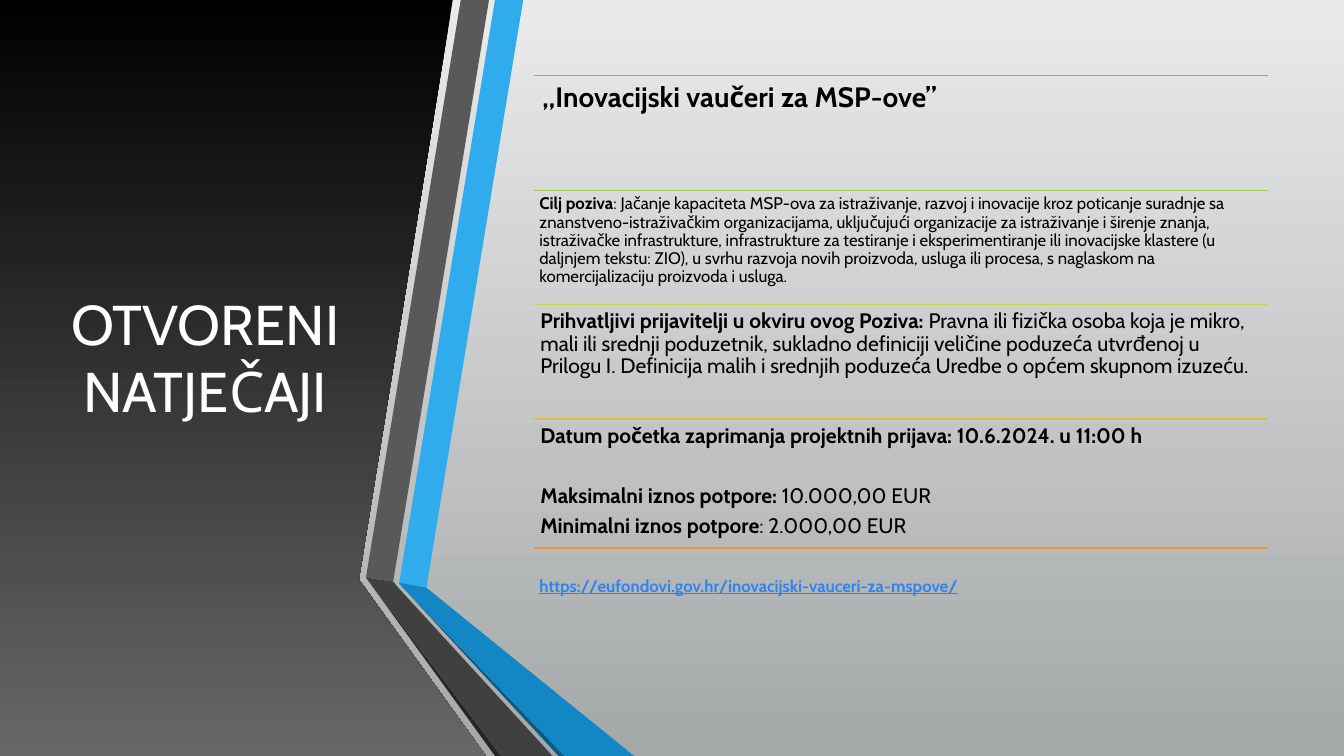
from lxml.etree import SubElement
from pptx import Presentation
from pptx.dml.color import RGBColor
from pptx.enum.shapes import MSO_CONNECTOR
from pptx.enum.text import MSO_ANCHOR, PP_ALIGN
from pptx.oxml.ns import qn
from pptx.util import Inches, Pt

WIDTH, HEIGHT = 13.33, 7.5
FONT = "Cabin"
COLORS = {
    "light": "E9EAEB", "shade": "A5A8A9", "black": "000000", "grey": "676767",
    "white": "FFFFFF", "link": "3085ED",
}
# Ribbon folds: fill and outline
RIBBONS = [
    ("30ACEC", [(3.96, 5.78), (4.23, 5.83), (5.19, 0), (4.91, 0)]),
    ("595959", [(4.85, 0), (4.57, 0), (3.63, 5.73), (3.9, 5.77)]),
    ("262626", [(3.63, 5.73), (4.91, HEIGHT), (4.97, HEIGHT)]),
    ("0C5A82", [(3.96, 5.79), (5.54, HEIGHT), (5.6, HEIGHT)]),
    ("1287C3", [(3.96, 5.79), (5.6, HEIGHT), (6.29, HEIGHT), (4.23, 5.83), (3.96, 5.78)]),
    ("404040", [(5.48, HEIGHT), (3.95, 5.83), (3.9, 5.77), (3.63, 5.73), (4.97, HEIGHT)]),
]
# Rows: rule colour, height, text size, inset, extra top inset, paragraphs of (bold, plain)
ROWS = [
    ("80C34F", 1.14, 20, 0.08, 0, [("„Inovacijski vaučeri za MSP-ove”", "")]),
    ("A1CB4A", 1.13, 12, 0.05, 0, [(
        "Cilj poziva",
        ": Jačanje kapaciteta MSP-ova za istraživanje, razvoj i inovacije kroz poticanje "
        "suradnje sa znanstveno-istraživačkim organizacijama, uključujući organizacije za "
        "istraživanje i širenje znanja, istraživačke infrastrukture, infrastrukture za "
        "testiranje i eksperimentiranje ili inovacijske klastere (u daljnjem tekstu: ZIO), "
        "u svrhu razvoja novih proizvoda, usluga ili procesa, s naglaskom na "
        "komercijalizaciju proizvoda i usluga.")]),
    ("C8D346", 1.14, 15, 0.06, 0, [(
        "Prihvatljivi prijavitelji u okviru ovog Poziva: ",
        "Pravna ili fizička osoba koja je mikro, mali ili srednji poduzetnik, sukladno "
        "definiciji veličine poduzeća utvrđenoj u Prilogu I. Definicija malih i srednjih "
        "poduzeća Uredbe o općem skupnom izuzeću.")]),
    ("DBC042", 1.28, 15, 0.06, 0, [
        ("Datum početka zaprimanja projektnih prijava: 10.6.2024. u 11:00 h", ""),
        ("Maksimalni iznos potpore: ", "10.000,00 EUR"),
        ("Minimalni iznos potpore", ": 2.000,00 EUR")]),
    ("E29D3E", 1.14, 12, 0.05, 0.24, [
        ("https://eufondovi.gov.hr/inovacijski-vauceri-za-mspove/", "")]),
]


def rgb(value):
    return RGBColor.from_string(value)


def shade(fill, top, bottom):
    """Fill with a gradient that runs straight down."""
    fill.gradient()
    fill.gradient_angle = 270
    for stop, name in zip(fill.gradient_stops, (top, bottom)):
        stop.color.rgb = rgb(COLORS[name])


def add_text(slide, box, paragraphs, size, color="black", inset=0.1, top=0,
             align=PP_ALIGN.LEFT, anchor=MSO_ANCHOR.TOP, spacing=0.9,
             underline=False, gap=0):
    """Place (bold, plain) paragraphs; gap is the space before the second one."""
    frame = slide.shapes.add_textbox(*map(Inches, box)).text_frame
    frame.word_wrap = True
    frame.vertical_anchor = anchor
    frame.margin_left = frame.margin_right = frame.margin_bottom = Inches(inset)
    frame.margin_top = Inches(inset + top)
    for i, parts in enumerate(paragraphs):
        par = frame.add_paragraph() if i else frame.paragraphs[0]
        par.alignment = align
        par.line_spacing = spacing
        par.space_after = Pt(size * 0.35)
        if i == 1:
            par.space_before = Pt(gap)
        for text, bold in zip(parts, (True, False)):
            if text:
                run = par.add_run()
                run.text = text
                font = run.font
                font.name, font.size, font.bold = FONT, Pt(size), bold
                font.underline = underline
                font.color.rgb = rgb(COLORS[color])


def add_outline(slide, points):
    points = [(Inches(x), Inches(y)) for x, y in points]
    builder = slide.shapes.build_freeform(*points[0])
    builder.add_line_segments(points[1:], close=True)
    shape = builder.convert_to_shape()
    shape.shadow.inherit = False
    shape.line.fill.background()
    return shape


def add_rule(slide, left, top, width, color):
    line = slide.shapes.add_connector(
        MSO_CONNECTOR.STRAIGHT, *map(Inches, (left, top, left + width, top)))
    line.line.color.rgb = rgb(color)
    line.line.width = Pt(1.25)
    SubElement(line._element.spPr, qn("a:effectLst"))


def add_panel(slide, box):
    left, top, width, height = box
    right, low = left + width, top + height
    fold = right - 1.26
    panel = add_outline(slide, [(left, top), (right - 0.33, top), (fold, 5.75),
                                (right, low), (left, low)])
    shade(panel.fill, "black", "grey")
    add_text(slide, (left + 0.59, top + height / 10, 2.89, 5.58),
             [("", "OTVORENI NATJEČAJI")], 40, color="white",
             align=PP_ALIGN.CENTER, anchor=MSO_ANCHOR.MIDDLE, spacing=1)


def add_ribbons(slide):
    for color, points in RIBBONS:
        fill = add_outline(slide, points).fill
        fill.solid()
        fill.fore_color.rgb = rgb(color)


def add_rows(slide, left, top, width):
    for color, height, size, inset, drop, paragraphs in ROWS:
        link = paragraphs[0][0].startswith("https")
        add_rule(slide, left, top, width, color)
        add_text(slide, (left, top, width, height), paragraphs, size,
                 color="link" if link else "black", inset=inset, top=drop,
                 underline=link, gap=21.5)
        top += height


def main():
    deck = Presentation()
    deck.slide_width, deck.slide_height = Inches(WIDTH), Inches(HEIGHT)
    slide = deck.slides.add_slide(deck.slide_layouts[6])
    shade(slide.background.fill, "light", "shade")
    add_panel(slide, (0, 0, 4.82, HEIGHT))
    add_ribbons(slide)
    add_rows(slide, 5.3, HEIGHT / 10, 7.28)
    deck.save("out.pptx")


if __name__ == "__main__":
    main()
